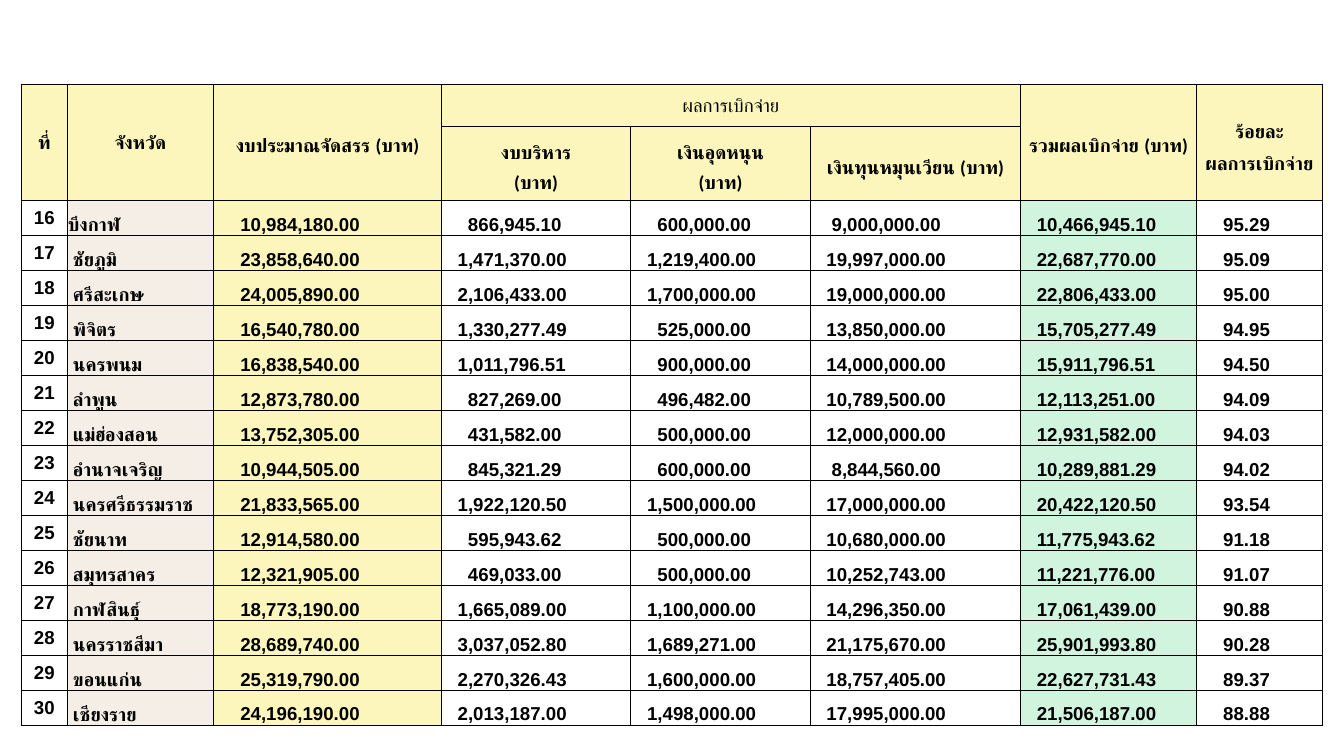
import pptx
import pptx.dml.color
import pptx.enum.text
import pptx.oxml
import pptx.oxml.ns
import pptx.util

Pt = pptx.util.Pt
RGBColor = pptx.dml.color.RGBColor
ALIGN = pptx.enum.text.PP_ALIGN
ANCHOR = pptx.enum.text.MSO_ANCHOR

BLACK = RGBColor(0x00, 0x00, 0x00)
YELLOW = RGBColor(0xFC, 0xF6, 0xBD)
BEIGE = RGBColor(0xF5, 0xEE, 0xE6)
GREEN = RGBColor(0xD0, 0xF4, 0xDE)

COLUMN_WIDTHS = [49, 157, 244, 203, 192.2, 225.4, 188.6, 134.6]
HEADER_HEIGHTS = [45.4, 79.2]
ROW_HEIGHT = 37.5
SPACE_WIDTH = 5.56
COLUMN_FILLS = [None, BEIGE, YELLOW, None, None, None, GREEN, None]
AMOUNT_INDENTS = [5, 3, 3, 3, 3, 5]
FIRST_NUMBER = 16

HEADERS = [
    (0, 0, 1, 0, "ที่", 24, True),
    (0, 1, 1, 1, "จังหวัด", 24, True),
    (0, 2, 1, 2, "งบประมาณจัดสรร (บาท)", 34, True),
    (0, 3, 0, 5, "ผลการเบิกจ่าย", 24, False),
    (0, 6, 1, 6, "รวมผลเบิกจ่าย (บาท)", 34, True),
    (0, 7, 1, 7, "ร้อยละ\nผลการเบิกจ่าย", 34, True),
    (1, 3, 1, 3, "งบบริหาร\n(บาท)", 34, True),
    (1, 4, 1, 4, "เงินอุดหนุน\n(บาท)", 34, True),
    (1, 5, 1, 5, "เงินทุนหมุนเวียน (บาท)", 34, True),
]

PROVINCES = [
    ("บึงกาฬ", "10,984,180.00", "866,945.10", "600,000.00", "9,000,000.00", "10,466,945.10", "95.29"),
    ("ชัยภูมิ", "23,858,640.00", "1,471,370.00", "1,219,400.00", "19,997,000.00", "22,687,770.00", "95.09"),
    ("ศรีสะเกษ", "24,005,890.00", "2,106,433.00", "1,700,000.00", "19,000,000.00", "22,806,433.00", "95.00"),
    ("พิจิตร", "16,540,780.00", "1,330,277.49", "525,000.00", "13,850,000.00", "15,705,277.49", "94.95"),
    ("นครพนม", "16,838,540.00", "1,011,796.51", "900,000.00", "14,000,000.00", "15,911,796.51", "94.50"),
    ("ลำพูน", "12,873,780.00", "827,269.00", "496,482.00", "10,789,500.00", "12,113,251.00", "94.09"),
    ("แม่ฮ่องสอน", "13,752,305.00", "431,582.00", "500,000.00", "12,000,000.00", "12,931,582.00", "94.03"),
    ("อำนาจเจริญ", "10,944,505.00", "845,321.29", "600,000.00", "8,844,560.00", "10,289,881.29", "94.02"),
    ("นครศรีธรรมราช", "21,833,565.00", "1,922,120.50", "1,500,000.00", "17,000,000.00", "20,422,120.50", "93.54"),
    ("ชัยนาท", "12,914,580.00", "595,943.62", "500,000.00", "10,680,000.00", "11,775,943.62", "91.18"),
    ("สมุทรสาคร", "12,321,905.00", "469,033.00", "500,000.00", "10,252,743.00", "11,221,776.00", "91.07"),
    ("กาฬสินธุ์", "18,773,190.00", "1,665,089.00", "1,100,000.00", "14,296,350.00", "17,061,439.00", "90.88"),
    ("นครราชสีมา", "28,689,740.00", "3,037,052.80", "1,689,271.00", "21,175,670.00", "25,901,993.80", "90.28"),
    ("ขอนแก่น", "25,319,790.00", "2,270,326.43", "1,600,000.00", "18,757,405.00", "22,627,731.43", "89.37"),
    ("เชียงราย", "24,196,190.00", "2,013,187.00", "1,498,000.00", "17,995,000.00", "21,506,187.00", "88.88"),
]


def write_text(cell, text, font="Arial", bold=True, align=ALIGN.LEFT,
               anchor=ANCHOR.BOTTOM, spacing=None, margins=(0.7, 0.7, 0.7, 0)):
    cell.margin_left, cell.margin_top, cell.margin_right, cell.margin_bottom = map(Pt, margins)
    cell.vertical_anchor = anchor
    cell.text_frame.text = text
    for paragraph in cell.text_frame.paragraphs:
        paragraph.alignment = align
        if spacing:
            paragraph.line_spacing = Pt(spacing)
        for run in paragraph.runs:
            run.font.name = font
            run.font.size = Pt(20)
            run.font.bold = bold
            run.font.color.rgb = BLACK


def style_cell(cell, color):
    properties = cell._tc.get_or_add_tcPr()
    for side in ("lnL", "lnR", "lnT", "lnB"):
        properties.append(pptx.oxml.parse_xml(
            f'<a:{side} {pptx.oxml.ns.nsdecls("a")} w="{Pt(1)}">'
            f'<a:solidFill><a:srgbClr val="{BLACK}"/></a:solidFill></a:{side}>'))
    if color is None:
        cell.fill.background()
    else:
        cell.fill.solid()
        cell.fill.fore_color.rgb = color


def add_budget_table(slide):
    heights = HEADER_HEIGHTS + [ROW_HEIGHT] * len(PROVINCES)
    shape = slide.shapes.add_table(len(heights), len(COLUMN_WIDTHS), Pt(23), Pt(90),
                                   Pt(sum(COLUMN_WIDTHS)), Pt(sum(heights)))
    table = shape.table
    table.first_row = table.horz_banding = False
    for column, width in zip(table.columns, COLUMN_WIDTHS):
        column.width = Pt(width)
    for row_index, height in enumerate(heights):
        table.rows[row_index].height = Pt(height)
        for column_index, color in enumerate(COLUMN_FILLS):
            is_header = row_index < len(HEADER_HEIGHTS)
            style_cell(table.cell(row_index, column_index), YELLOW if is_header else color)
    return table


def fill_headers(table):
    for top, left, bottom, right, text, spacing, bold in HEADERS:
        cell = table.cell(top, left)
        if (top, left) != (bottom, right):
            cell.merge(table.cell(bottom, right))
        write_text(cell, text, font="Calibri", bold=bold, align=ALIGN.CENTER,
                   anchor=ANCHOR.MIDDLE, spacing=spacing, margins=(3.6, 3.6, 3.6, 3.6))


def fill_provinces(table):
    longest = [max(map(len, amounts)) for amounts in list(zip(*PROVINCES))[1:]]
    for index, (province, *amounts) in enumerate(PROVINCES):
        row = index + len(HEADER_HEIGHTS)
        write_text(table.cell(row, 0), str(FIRST_NUMBER + index),
                   align=ALIGN.CENTER, anchor=ANCHOR.MIDDLE)
        indents = [1 if index else 0]
        indents += [base + length - len(amount)
                    for base, length, amount in zip(AMOUNT_INDENTS, longest, amounts)]
        for column, (text, indent) in enumerate(zip([province, *amounts], indents), start=1):
            write_text(table.cell(row, column), text,
                       margins=(0.7 + indent * SPACE_WIDTH, 0.7, 0.7, 0))


def main():
    presentation = pptx.Presentation()
    presentation.slide_width = Pt(1440)
    presentation.slide_height = Pt(810)
    slide = presentation.slides.add_slide(presentation.slide_layouts[6])
    table = add_budget_table(slide)
    fill_headers(table)
    fill_provinces(table)
    presentation.save("out.pptx")


if __name__ == "__main__":
    main()
